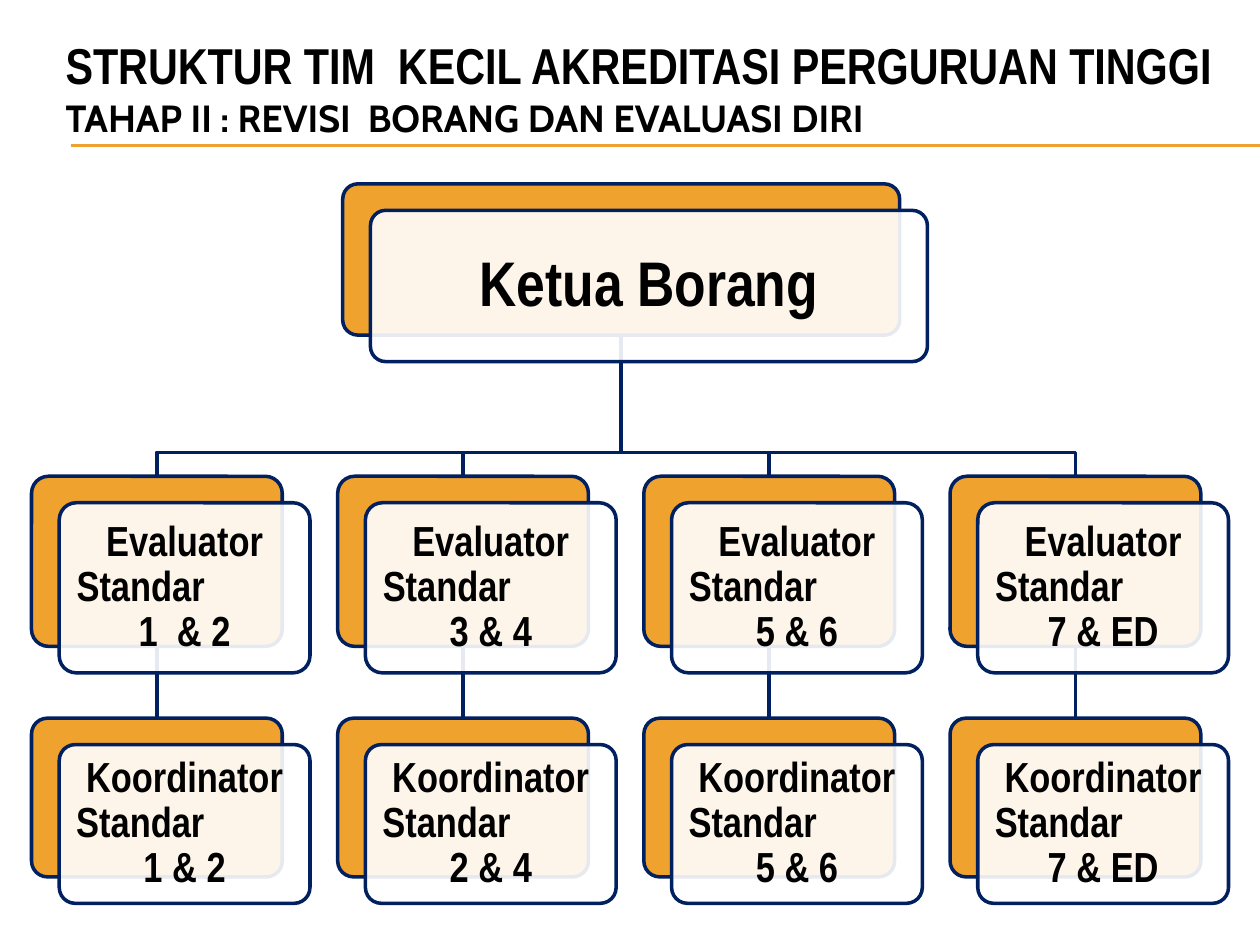
import pptx
import pptx.util
import pptx.dml.color
import pptx.enum.shapes
import pptx.enum.text
import pptx.oxml.ns
from lxml import etree

Inches, Pt = pptx.util.Inches, pptx.util.Pt
SHAPE = pptx.enum.shapes.MSO_SHAPE
CONNECTOR = pptx.enum.shapes.MSO_CONNECTOR
ALIGN = pptx.enum.text.PP_ALIGN
ANCHOR = pptx.enum.text.MSO_ANCHOR

TITLE = "STRUKTUR TIM  KECIL AKREDITASI PERGURUAN TINGGI"
SUBTITLE = "TAHAP II : REVISI  BORANG DAN EVALUASI DIRI"
LEADER = "Ketua Borang"
ROLES = [
    ("Evaluator", ["1  & 2", "3 & 4", "5 & 6", "7 & ED"]),
    ("Koordinator", ["1 & 2", "2 & 4", "5 & 6", "7 & ED"]),
]

THEME = {
    "gold": "F0A22E", "navy": "002060", "white": "FFFFFF", "black": "000000",
    "font": "Arial Narrow", "subtitle_font": "Cabin",
    "title": 28.8, "subtitle": 21.6, "leader": 36, "role": 24,
}

# Left, top, width, height in inches
LEADER_BOX = (2.72, 1.46, 4.42, 1.2)
ROW_BOXES = [(0.25, 3.78, 1.99, 1.35), (0.25, 5.7, 1.99, 1.26)]
COLUMN_PITCH = 2.43
FRONT_DX, FRONT_DY = 0.22, 0.21
BRANCH_Y = 3.59


def color(name):
    return pptx.dml.color.RGBColor.from_string(THEME[name])


def style_line(line, name, width):
    line.color.rgb = color(name)
    line.width = Pt(width)


def write(p, text, size, font="font", align=ALIGN.CENTER, spacing=None):
    p.alignment = align
    p.line_spacing = spacing
    p.space_before = p.space_after = Pt(0)
    r = p.add_run()
    r.text = text
    r.font.name = THEME[font]
    r.font.size = Pt(THEME[size])
    r.font.bold = True
    r.font.color.rgb = color("black")


def set_frame(tf, left, top, right, bottom):
    tf.word_wrap = True
    tf.auto_size = pptx.enum.text.MSO_AUTO_SIZE.NONE
    tf.vertical_anchor = ANCHOR.MIDDLE
    tf.margin_left, tf.margin_top = Inches(left), Inches(top)
    tf.margin_right, tf.margin_bottom = Inches(right), Inches(bottom)


def add_card(s, box, fill):
    sp = s.shapes.add_shape(SHAPE.ROUNDED_RECTANGLE, *map(Inches, box))
    sp.adjustments[0] = 0.1
    sp.shadow.inherit = False
    sp.fill.solid()
    sp.fill.fore_color.rgb = color(fill)
    style_line(sp.line, "navy", 2)
    return sp


def add_front_card(s, box, lines, size, inset):
    """Add the translucent card, offset from box; lines are (text, alignment)."""
    left, top, width, height = box
    sp = add_card(s, (left + FRONT_DX, top + FRONT_DY, width, height), "white")
    rgb = sp.fill._xPr.find(".//" + pptx.oxml.ns.qn("a:srgbClr"))
    etree.SubElement(rgb, pptx.oxml.ns.qn("a:alpha"), val="90000")
    tf = sp.text_frame
    set_frame(tf, inset, inset, inset, inset)
    for i, (text, align) in enumerate(lines):
        p = tf.add_paragraph() if i else tf.paragraphs[0]
        write(p, text, size, align=align, spacing=0.9)


def add_line(s, start, end, name, width):
    c = s.shapes.add_connector(
        CONNECTOR.STRAIGHT, *map(Inches, (*start, *end)))
    style_line(c.line, name, width)
    etree.SubElement(c._element.spPr, pptx.oxml.ns.qn("a:effectLst"))
    return c


def add_branch(s, parent, child):
    """Draw the stepped line from the foot of parent to the top of child."""
    x1, y1 = parent.left + parent.width // 2, parent.top + parent.height
    x2, y2 = child.left + child.width // 2, child.top
    bend = Inches(BRANCH_Y)
    builder = s.shapes.build_freeform(x1, y1)
    builder.add_line_segments([(x1, bend), (x2, bend), (x2, y2)], close=False)
    sp = builder.convert_to_shape()
    sp.shadow.inherit = False
    sp.fill.background()
    style_line(sp.line, "navy", 2)


def add_title(s):
    title = s.shapes.title
    title.left, title.top = Inches(0.42), Inches(0.33)
    title.width, title.height = Inches(9.58), Inches(1.08)
    tf = title.text_frame
    set_frame(tf, 0.1, 0, 0.1, 0.36)
    write(tf.paragraphs[0], TITLE, "title", align=ALIGN.LEFT)
    write(tf.add_paragraph(), SUBTITLE, "subtitle", font="subtitle_font",
          align=ALIGN.LEFT)


def add_chart_of_roles(s):
    boxes = [[(left + i * COLUMN_PITCH, top, w, h) for i in range(len(ranges))]
             for (left, top, w, h), (_, ranges) in zip(ROW_BOXES, ROLES)]
    leader = add_card(s, LEADER_BOX, "gold")
    evaluators, coordinators = [
        [add_card(s, box, "gold") for box in row] for row in boxes]

    for evaluator, coordinator in zip(evaluators, coordinators):
        add_branch(s, leader, evaluator)
        link = add_line(s, (0, 0), (1, 1), "navy", 2)
        link.begin_connect(evaluator, 2)
        link.end_connect(coordinator, 0)

    add_front_card(s, LEADER_BOX, [(LEADER, ALIGN.CENTER)], "leader", 0.15)
    for row, (role, ranges) in zip(boxes, ROLES):
        for box, standards in zip(row, ranges):
            lines = [(role, ALIGN.CENTER), ("Standar", ALIGN.LEFT),
                     (standards, ALIGN.CENTER)]
            add_front_card(s, box, lines, "role", 0.1)


def main():
    prs = pptx.Presentation()
    prs.slide_width, prs.slide_height = Inches(10), Inches(7.5)
    s = prs.slides.add_slide(prs.slide_layouts[5])
    for y in (1.15, 1.16):
        add_line(s, (0.56, y), (10, y), "gold", 0.75)
    add_title(s)
    add_chart_of_roles(s)
    prs.save("out.pptx")


if __name__ == "__main__":
    main()
